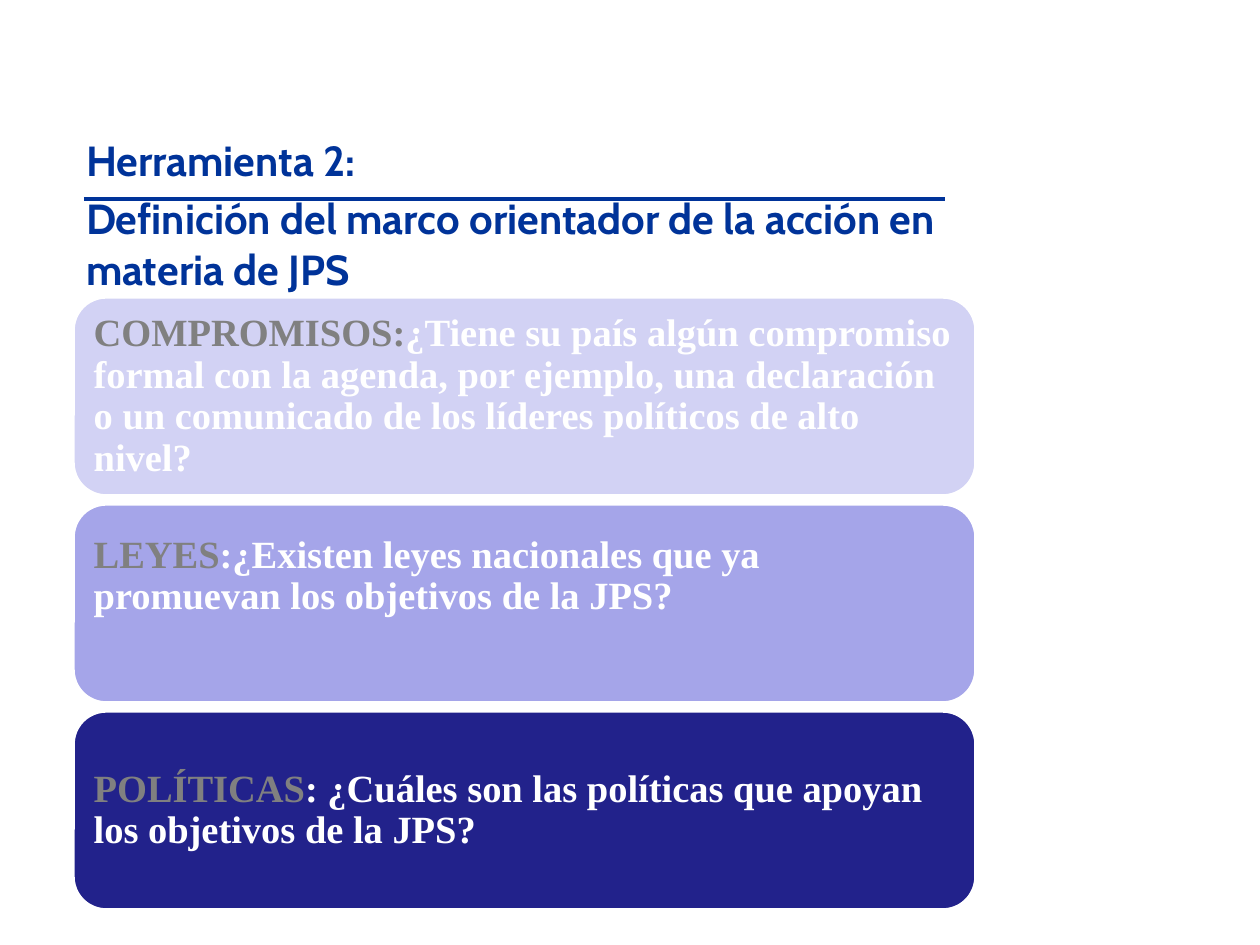
from lxml import etree
from pptx import Presentation
from pptx.dml.color import RGBColor
from pptx.enum.shapes import MSO_CONNECTOR as Connector, MSO_SHAPE as Shape
from pptx.enum.text import MSO_ANCHOR as Anchor, PP_ALIGN as Align
from pptx.oxml.ns import qn
from pptx.util import Pt

PX = 914400 // 126
WHITE = RGBColor(0xFF, 0xFF, 0xFF)
BLUE = RGBColor(0x00, 0x33, 0x99)
GRAY = RGBColor(0x80, 0x80, 0x80)
LAVENDER = RGBColor(0xD2, 0xD2, 0xF4)
PERIWINKLE = RGBColor(0xA5, 0xA5, 0xE9)
NAVY = RGBColor(0x22, 0x22, 0x8B)


def px(*values):
    return [value * PX for value in values]


class SlideBuilder:
    title_font = {"name": "Cabin", "size": Pt(24), "bold": True}
    card_font = {"name": "Times New Roman", "size": Pt(22), "bold": True}

    def __init__(self, slide):
        self.slide = slide

    def set_values(self, target, values):
        for name, value in values.items():
            setattr(target, name, value)

    def set_frame(self, frame, anchor, left, top, right, bottom):
        margins = zip(("left", "top", "right", "bottom"),
                      px(left, top, right, bottom))
        values = {f"margin_{side}": margin for side, margin in margins}
        self.set_values(frame, {"word_wrap": True, "vertical_anchor": anchor,
                                **values})

    def add_run(self, paragraph, text, font, color):
        run = paragraph.add_run()
        run.text = text
        self.set_values(run.font, font)
        run.font.color.rgb = color

    def line(self, x1, y1, x2, y2, color, width):
        connector = self.slide.shapes.add_connector(
            Connector.STRAIGHT, *px(x1, y1, x2, y2))
        connector.line.color.rgb = color
        connector.line.width = Pt(width)
        etree.SubElement(connector._element.spPr, qn("a:effectLst"))

    def title(self, left, top, width, height, lines):
        box = self.slide.shapes.add_textbox(*px(left, top, width, height))
        frame = box.text_frame
        self.set_frame(frame, Anchor.TOP, 13, 8, 13, 6)
        for index, text in enumerate(lines):
            paragraph = frame.add_paragraph() if index else frame.paragraphs[0]
            paragraph.space_before = Pt(4.8 if index else 0)
            self.add_run(paragraph, text, self.title_font, BLUE)

    def card(self, left, top, width, height, fill, label, text, lift):
        shape = self.slide.shapes.add_shape(
            Shape.ROUNDED_RECTANGLE, *px(left, top, width, height))
        shape.shadow.inherit = False
        shape.fill.solid()
        shape.fill.fore_color.rgb = fill
        shape.line.color.rgb = WHITE
        shape.line.width = Pt(2)
        frame = shape.text_frame
        # A deeper bottom margin raises the centred text by the lift
        self.set_frame(frame, Anchor.MIDDLE, 11, 11, 11, 11 + 2 * lift)
        paragraph = frame.paragraphs[0]
        self.set_values(paragraph, {"alignment": Align.LEFT,
                                    "line_spacing": 0.9})
        self.add_run(paragraph, label, self.card_font, GRAY)
        self.add_run(paragraph, text, self.card_font, WHITE)


def main():
    presentation = Presentation()
    presentation.slide_width, presentation.slide_height = px(1260, 945)
    slide = presentation.slides.add_slide(presentation.slide_layouts[6])
    builder = SlideBuilder(slide)

    # Heading with its rule
    builder.line(84, 199, 945, 199, BLUE, 2)
    builder.title(73, 126, 903, 168, [
        "Herramienta 2:",
        "Definición del marco orientador de la acción en materia de JPS",
    ])

    # Stacked question cards: fill, label, question, text lift
    cards = [
        (LAVENDER, "COMPROMISOS:",
         "¿Tiene su país algún compromiso formal con la agenda, por ejemplo, "
         "una declaración o un comunicado de los líderes políticos de alto "
         "nivel?", 0),
        (PERIWINKLE, "LEYES",
         ":¿Existen leyes nacionales que ya promuevan los objetivos de la JPS?",
         27),
        (NAVY, "POLÍTICAS",
         ": ¿Cuáles son las políticas que apoyan los objetivos de la JPS?", 0),
    ]
    card_top, card_pitch = 297, 207
    for index, card in enumerate(cards):
        builder.card(73, card_top + index * card_pitch, 903, 199, *card)

    presentation.save("out.pptx")


if __name__ == "__main__":
    main()
